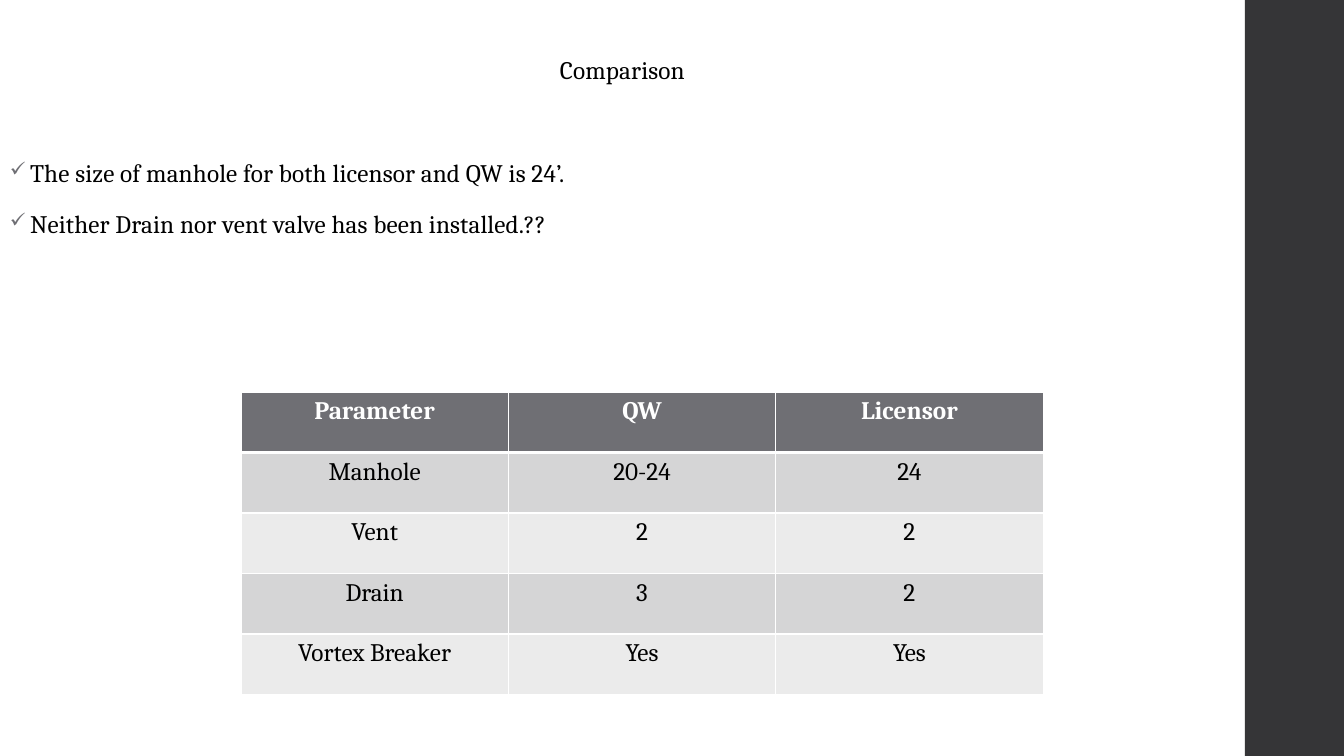
from dataclasses import dataclass

from lxml.etree import SubElement
from pptx import Presentation
from pptx.dml.color import RGBColor
from pptx.enum.shapes import MSO_SHAPE
from pptx.enum.text import PP_ALIGN
from pptx.oxml.ns import qn
from pptx.slide import Slide
from pptx.table import _Cell as Cell
from pptx.text.text import TextFrame, _Paragraph as Paragraph
from pptx.util import Pt

BLACK = RGBColor(0x00, 0x00, 0x00)
WHITE = RGBColor(0xFF, 0xFF, 0xFF)
CHARCOAL = RGBColor(0x35, 0x35, 0x37)
GREY = RGBColor(0x6F, 0x6F, 0x74)
BAND_DARK = RGBColor(0xD5, 0xD5, 0xD6)
BAND_LIGHT = RGBColor(0xEB, 0xEB, 0xEB)

FONT = "Cambria"
FONT_SIZE = 18
SLIDE_W, SLIDE_H = 960, 540
BAND_LEFT = 889.2
TABLE_LEFT, TABLE_TOP = 172.08, 280.08
COL_W, ROW_H = 191, 43.2


@dataclass(frozen=True)
class BodyLine:
    text: str
    space_before: float
    checked: bool = True


@dataclass(frozen=True)
class TableRow:
    values: tuple[str, ...]
    fill: RGBColor
    color: RGBColor = BLACK
    bold: bool = False
    top: float = 1
    bottom: float = 1


BODY = (
    BodyLine("Comparison", 0, checked=False),
    BodyLine("The size of manhole for both licensor and QW is 24’.", 50.8),
    BodyLine("Neither Drain nor vent valve has been installed.??", 14),
)

ROWS = (
    TableRow(("Parameter", "QW", "Licensor"), GREY, WHITE, bold=True, bottom=3),
    TableRow(("Manhole", "20-24", "24"), BAND_DARK, top=3),
    TableRow(("Vent", "2", "2"), BAND_LIGHT),
    TableRow(("Drain", "3", "2"), BAND_DARK),
    TableRow(("Vortex Breaker", "Yes", "Yes"), BAND_LIGHT),
)


def format_runs(p: Paragraph, color: RGBColor, bold: bool = False) -> None:
    for r in p.runs:
        r.font.name = FONT
        r.font.size = Pt(FONT_SIZE)
        r.font.bold = bold
        r.font.color.rgb = color


def add_check_bullet(p: Paragraph) -> None:
    pPr = p._p.get_or_add_pPr()
    pPr.set("marL", str(Pt(14.4)))
    pPr.set("indent", str(-Pt(14.4)))
    bullet_color = SubElement(pPr, qn("a:buClr"))
    SubElement(bullet_color, qn("a:srgbClr"), val=str(GREY))
    SubElement(pPr, qn("a:buSzPct"), val="80000")
    SubElement(pPr, qn("a:buChar"), char="✓")


def add_body_line(tf: TextFrame, line: BodyLine, first: bool) -> None:
    p = tf.paragraphs[0] if first else tf.add_paragraph()
    p.text = line.text
    p.line_spacing = 0.95
    p.space_before = Pt(line.space_before)
    p.space_after = Pt(2)
    format_runs(p, BLACK)
    for r in p.runs:
        r.font._element.set("spc", "10")
    if line.checked:
        add_check_bullet(p)
    else:
        p.alignment = PP_ALIGN.CENTER


def add_body(slide: Slide) -> None:
    sp = slide.shapes.add_textbox(0, 0, Pt(BAND_LEFT), Pt(SLIDE_H))
    tf = sp.text_frame
    tf.word_wrap = True
    tf.margin_top = Pt(40.4)
    for i, line in enumerate(BODY):
        add_body_line(tf, line, first=i == 0)


def add_side_band(slide: Slide) -> None:
    sp = slide.shapes.add_shape(
        MSO_SHAPE.RECTANGLE, Pt(BAND_LEFT), 0, Pt(SLIDE_W - BAND_LEFT), Pt(SLIDE_H)
    )
    sp.shadow.inherit = False
    sp.fill.solid()
    sp.fill.fore_color.rgb = CHARCOAL
    sp.line.fill.background()


def set_borders(cell: Cell, top: float, bottom: float) -> None:
    """Draw white cell borders; call before filling, as lines precede the fill."""
    tcPr = cell._tc.get_or_add_tcPr()
    for side, width in (("L", 1), ("R", 1), ("T", top), ("B", bottom)):
        ln = SubElement(tcPr, qn(f"a:ln{side}"), w=str(Pt(width)))
        fill = SubElement(ln, qn("a:solidFill"))
        SubElement(fill, qn("a:srgbClr"), val=str(WHITE))


def fill_cell(cell: Cell, text: str, row: TableRow) -> None:
    set_borders(cell, row.top, row.bottom)
    cell.fill.solid()
    cell.fill.fore_color.rgb = row.fill
    p = cell.text_frame.paragraphs[0]
    p.text = text
    p.alignment = PP_ALIGN.CENTER
    format_runs(p, row.color, row.bold)


def add_comparison_table(slide: Slide) -> None:
    n_rows, n_cols = len(ROWS), len(ROWS[0].values)
    table = slide.shapes.add_table(
        n_rows, n_cols, Pt(TABLE_LEFT), Pt(TABLE_TOP),
        Pt(n_cols * COL_W), Pt(n_rows * ROW_H),
    ).table
    for i, row in enumerate(ROWS):
        for j, text in enumerate(row.values):
            fill_cell(table.cell(i, j), text, row)


def main() -> None:
    prs = Presentation()
    prs.slide_width, prs.slide_height = Pt(SLIDE_W), Pt(SLIDE_H)
    slide = prs.slides.add_slide(prs.slide_layouts[6])
    add_side_band(slide)
    add_body(slide)
    add_comparison_table(slide)
    prs.save("out.pptx")


if __name__ == "__main__":
    main()
